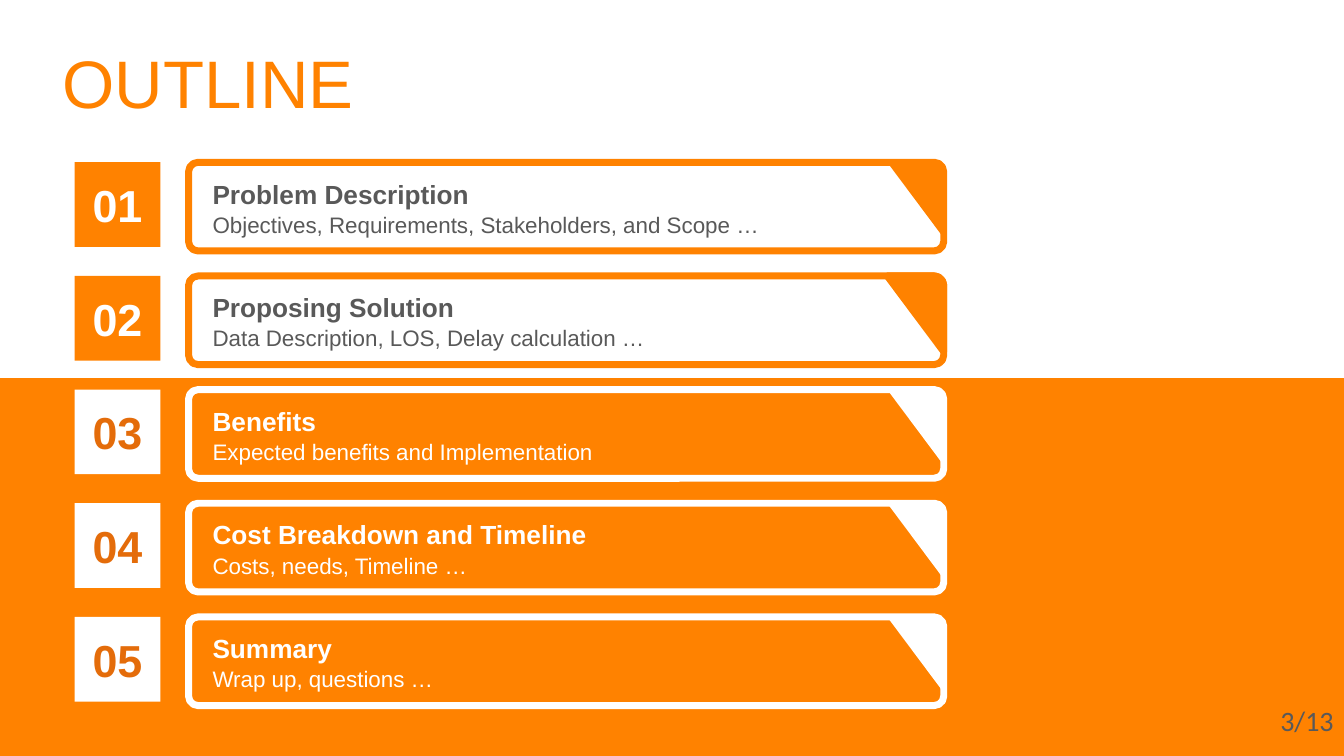
"""Build the outline slide: five numbered agenda rows over a two-tone background."""
from math import cos, pi, sin

from pptx import Presentation
from pptx.dml.color import RGBColor
from pptx.enum.shapes import MSO_SHAPE as Preset
from pptx.enum.text import MSO_ANCHOR as Anchor, PP_ALIGN as Align
from pptx.util import Inches, Pt

ORANGE, WHITE, GREY, RUST = "FF8200", "FFFFFF", "595959", "E46C0A"


def paint(part, fill, line=None):
    part.shadow.inherit = False
    part.fill.solid()
    part.fill.fore_color.rgb = RGBColor.from_string(fill)
    if line:
        part.line.color.rgb = RGBColor.from_string(line)
        part.line.width = Pt(5)
    else:
        part.line.fill.background()


def write(part, text, color, size, align=Align.LEFT, wrap=True, anchor=Anchor.MIDDLE, **font):
    frame = part.text_frame
    frame.word_wrap = wrap
    frame.vertical_anchor = anchor
    line = frame.paragraphs[0]
    line.alignment = align
    run = line.add_run()
    run.text = text
    run.font.color.rgb = RGBColor.from_string(color)
    for name, value in {"name": "Arial", "size": Pt(size), **font}.items():
        setattr(run.font, name, value)
    return line


deck = Presentation()
deck.slide_width, deck.slide_height = Inches(13.33), Inches(7.5)
slide = deck.slides.add_slide(deck.slide_layouts[6])
shapes = slide.shapes

lower_half = shapes.add_shape(Preset.RECTANGLE, 0, Inches(3.75), Inches(13.33), Inches(3.75))
paint(lower_half, ORANGE)

heading = shapes.add_textbox(Inches(0.52), Inches(0.39), Inches(9.59), Inches(0.94))
heading_line = write(heading, "OUTLINE", ORANGE, 48)
heading_line.line_spacing = 0.9
heading_line.space_before = Pt(10)

topics = [
    ("Problem Description", "Objectives, Requirements, Stakeholders, and Scope …"),
    ("Proposing Solution", "Data Description, LOS, Delay calculation …"),
    ("Benefits", "Expected benefits and Implementation"),
    ("Cost Breakdown and Timeline", "Costs, needs, Timeline …"),
    ("Summary", "Wrap up, questions …"),
]
first_top, last_top = 1.61, 6.12
row_pitch = (last_top - first_top) / (len(topics) - 1)
corner_radius = 0.1

for index, (topic, detail) in enumerate(topics):
    top = first_top + index * row_pitch
    on_white = index < 2
    accent, inside = (ORANGE, WHITE) if on_white else (WHITE, ORANGE)
    text_color, number_color = (GREY, WHITE) if on_white else (WHITE, RUST)

    number = shapes.add_shape(Preset.RECTANGLE, Inches(0.74), Inches(top), Inches(0.85), Inches(0.84))
    paint(number, accent)
    write(number, f"{index + 1:02}", number_color, 32, Align.CENTER, bold=True)

    card = shapes.add_shape(Preset.ROUNDED_RECTANGLE, Inches(1.87), Inches(top), Inches(7.49), Inches(0.88))
    card.adjustments[0] = 0.107
    paint(card, inside, accent)

    angles = [step * pi / 16 for step in range(9)]
    arc = [(9.26 + corner_radius * sin(a), top + corner_radius * (1 - cos(a))) for a in angles]
    outline = [(Inches(x), Inches(y)) for x, y in arc + [(9.36, top + 0.75)]]
    builder = shapes.build_freeform(Inches(8.8), Inches(top))
    builder.add_line_segments(outline, close=True)
    paint(builder.convert_to_shape(), accent, accent if index == 1 else None)

    topic_box = shapes.add_textbox(Inches(2.01), Inches(top + 0.1), Inches(6.93), Inches(0.42))
    write(topic_box, topic, text_color, 18.7, bold=True)
    detail_box = shapes.add_textbox(Inches(2.01), Inches(top + 0.43), Inches(6.93), Inches(0.37))
    write(detail_box, detail, text_color, 16)

page_number = shapes.add_textbox(Inches(12.6), Inches(6.93), Inches(0.74), Inches(0.44))
write(page_number, "3/13", "58595B", 20, wrap=False, anchor=Anchor.TOP, name="Calibri")

deck.save("out.pptx")
